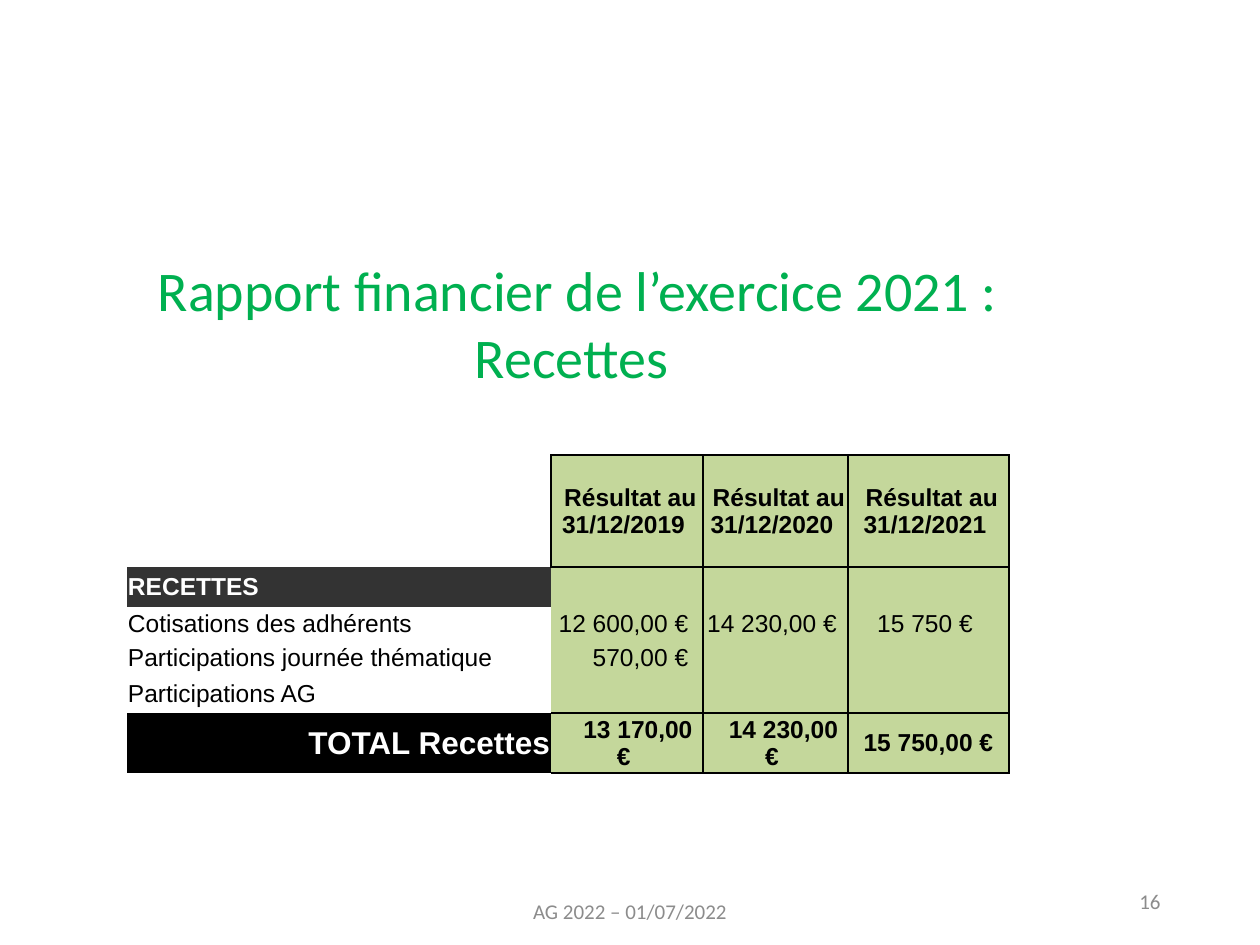
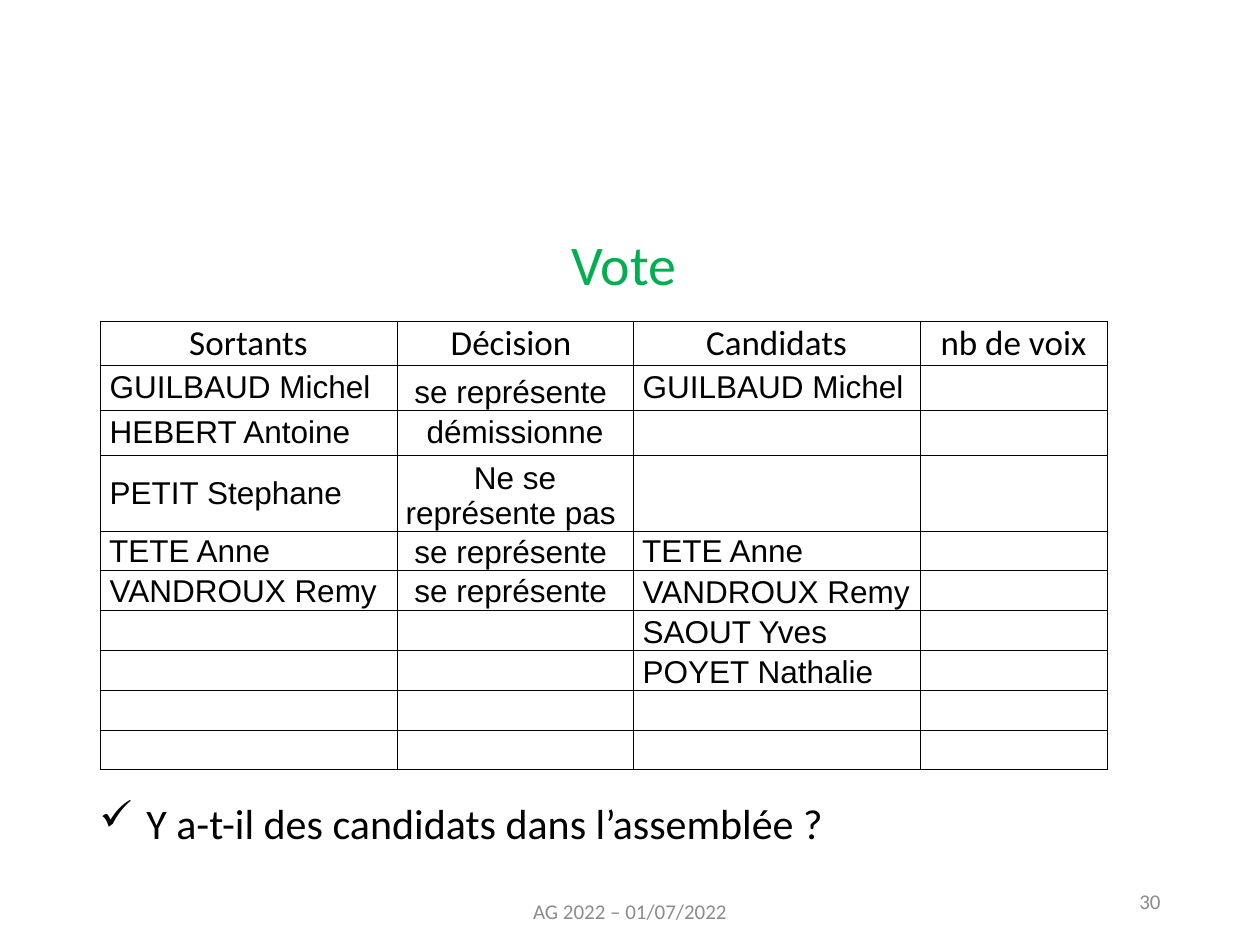
from lxml.etree import SubElement
from pptx import Presentation
from pptx.dml.color import RGBColor
from pptx.enum.text import MSO_ANCHOR as Anchor, PP_ALIGN as Align
from pptx.oxml.ns import qn
from pptx.util import Emu, Pt

PX = 914400 / 126
GREEN, GREY, BLACK, WHITE = "00B050", "8C8C8C", "000000", "FFFFFF"
PALE_GREEN, CHARCOAL = "C4D79B", "333333"
SIDES = "LRTB"


def px(length):
    return Emu(round(length * PX))


def color(value):
    return RGBColor.from_string(value)


def style(para, size, name, ink, align=Align.LEFT, bold=False):
    para.alignment = align
    font = para.font
    font.size, font.name, font.bold = Pt(size), name, bold
    font.color.rgb = color(ink)


def add_text(page, place, text, size, ink, align, anchor=Anchor.TOP):
    box = page.shapes.add_textbox(*map(px, place))
    frame = box.text_frame
    frame.word_wrap, frame.vertical_anchor = True, anchor
    para = frame.paragraphs[0]
    para.text = text
    style(para, size, "Calibri", ink, align)
    return para


def add_title(page, place, text):
    add_text(page, place, text, 32, GREEN, Align.CENTER)


def add_footer(page, number):
    add_text(page, (890, 876, 283, 50), number, 12, GREY, Align.RIGHT, Anchor.MIDDLE)
    add_text(page, (417, 897, 426, 29), "AG 2022 – 01/07/2022", 12, GREY,
             Align.CENTER, Anchor.MIDDLE)


def add_check_item(page, place, text):
    box = page.shapes.add_textbox(*map(px, place))
    box.text_frame.word_wrap = True
    para = box.text_frame.paragraphs[0]
    para.text = text
    props = para._p.get_or_add_pPr()
    props.set("marL", str(px(47)))
    props.set("indent", str(px(-47)))
    SubElement(props, qn("a:buChar")).set("char", "✓")
    para.line_spacing, para.space_after = 1.07, Pt(8)
    style(para, 24, "Calibri", BLACK)


def add_grid(page, left, top, widths, heights):
    frame = page.shapes.add_table(len(heights), len(widths), px(left), px(top),
                                  px(sum(widths)), px(sum(heights)))
    table = frame.table
    table.first_row = table.horz_banding = False
    for column, width in zip(table.columns, widths):
        column.width = px(width)
    for row, height in zip(table.rows, heights):
        row.height = px(height)
    return table


def set_borders(cell, sides, width):
    props = cell._tc.get_or_add_tcPr()
    for index, side in enumerate(SIDES):
        line = props.makeelement(qn(f"a:ln{side}"), {"w": str(Pt(width))})
        props.insert(index, line)
        if side in sides:
            fill = SubElement(line, qn("a:solidFill"))
            SubElement(fill, qn("a:srgbClr")).set("val", BLACK)
        else:
            SubElement(line, qn("a:noFill"))


def fill_cell(cell, text, size, name="Arial", ink=BLACK, align=Align.LEFT, bold=False,
              fill=None, sides=SIDES, width=1.0, anchor=Anchor.MIDDLE, indent=0):
    cell.margin_left = cell.margin_right = cell.margin_top = px(1)
    cell.margin_bottom = 0
    cell.vertical_anchor = anchor
    if fill:
        cell.fill.solid()
        cell.fill.fore_color.rgb = color(fill)
    else:
        cell.fill.background()
    set_borders(cell, sides, width)
    para = cell.text_frame.paragraphs[0]
    if text:
        para.text = text
    if indent:
        para._p.get_or_add_pPr().set("indent", str(px(indent)))
    style(para, size, name, ink, align, bold)
    if not text:
        SubElement(para._p, qn("a:endParaRPr")).set("sz", str(size * 100))


def add_income_table(page):
    years = ["2019", "2020", "2021"]
    # Label, then one amount for each year
    lines = [
        ["RECETTES", "", "", ""],
        ["Cotisations des adhérents", "12 600,00 € ", "14 230,00 € ", "15 750 € "],
        ["Participations journée thématique", "570,00 € ", "", ""],
        ["Participations AG", "", "", ""],
        ["TOTAL Recettes", "13 170,00 € ", "14 230,00 € ", " 15 750,00 € "],
    ]
    indents = {(4, 1): 34, (6, 1): 22, (6, 2): 16}
    table = add_grid(page, 127, 455, [424, 152, 145, 161], [52, 52, 40, 34, 34, 38, 60])

    # Header, two rows high
    for row in (0, 1):
        fill_cell(table.cell(row, 0), "", 14, sides="R")
        for column, year in enumerate(years, 1):
            text = f" Résultat au 31/12/{year} " if row == 0 else ""
            fill_cell(table.cell(row, column), text, 14, align=Align.CENTER,
                      bold=True, fill=PALE_GREEN)
    for column in range(1, 4):
        table.cell(0, column).merge(table.cell(1, column))

    # Labels and amounts
    last = len(lines) + 1
    for row, (label, *amounts) in enumerate(lines, 2):
        total, heading = row == last, row == 2
        fill_cell(table.cell(row, 0), label, 18 if total else 14,
                  ink=WHITE if total or heading else BLACK,
                  align=Align.RIGHT if total else Align.LEFT, bold=total or heading,
                  fill=BLACK if total else CHARCOAL if heading else None, sides="")
        for column, amount in enumerate(amounts, 1):
            sides = "R" + ("L" if column > 1 else "")
            sides += "T" if heading or total else ""
            sides += "B" if row >= last - 1 else ""
            fill_cell(table.cell(row, column), amount, 14, align=Align.CENTER, bold=total,
                      fill=PALE_GREEN, sides=sides, indent=indents.get((row, column), 0))


def add_vote_table(page):
    # Outgoing member, decision, candidate
    votes = [
        (" GUILBAUD Michel", "se représente ", " GUILBAUD Michel"),
        (" HEBERT Antoine", "démissionne", ""),
        (" PETIT Stephane", "Ne se représente pas ", ""),
        (" TETE Anne", "se représente ", " TETE Anne"),
        (" VANDROUX Remy", "se représente ", " VANDROUX Remy"),
        ("", "", " SAOUT Yves"),
        ("", "", " POYET Nathalie"),
        ("", "", ""),
        ("", "", ""),
    ]
    at_bottom = {(1, 1), (3, 1), (4, 1), (5, 2), (6, 2), (7, 2)}
    heights = [44, 45, 45, 72, 39, 40, 40, 40, 40, 39]
    table = add_grid(page, 100, 321, [297, 236, 287, 187], heights)
    for column, heading in enumerate(["Sortants", "Décision ", "Candidats", "nb de voix"]):
        fill_cell(table.cell(0, column), heading, 20, "Calibri", align=Align.CENTER, width=0.5)
    for row, vote in enumerate(votes, 1):
        for column, text in enumerate((*vote, "")):
            fill_cell(table.cell(row, column), text, 18, width=0.5,
                      align=Align.CENTER if column == 1 else Align.LEFT,
                      anchor=Anchor.BOTTOM if (row, column) in at_bottom else Anchor.MIDDLE)


def main():
    deck = Presentation()
    deck.slide_width, deck.slide_height = px(1260), px(945)
    blank = deck.slide_layouts[6]

    # Income report
    page = deck.slides.add_slide(blank)
    add_title(page, (67, 249, 1022, 149), "Rapport financier de l’exercice 2021 : Recettes ")
    add_footer(page, "16")
    add_income_table(page)

    # Vote
    page = deck.slides.add_slide(blank)
    add_vote_table(page)
    add_title(page, (189, 223, 883, 81), "Vote ")
    add_footer(page, "30")
    add_check_item(page, (87, 788, 1162, 64), "Y a-t-il des candidats dans l’assemblée ?")

    deck.save("out.pptx")


if __name__ == "__main__":
    main()
